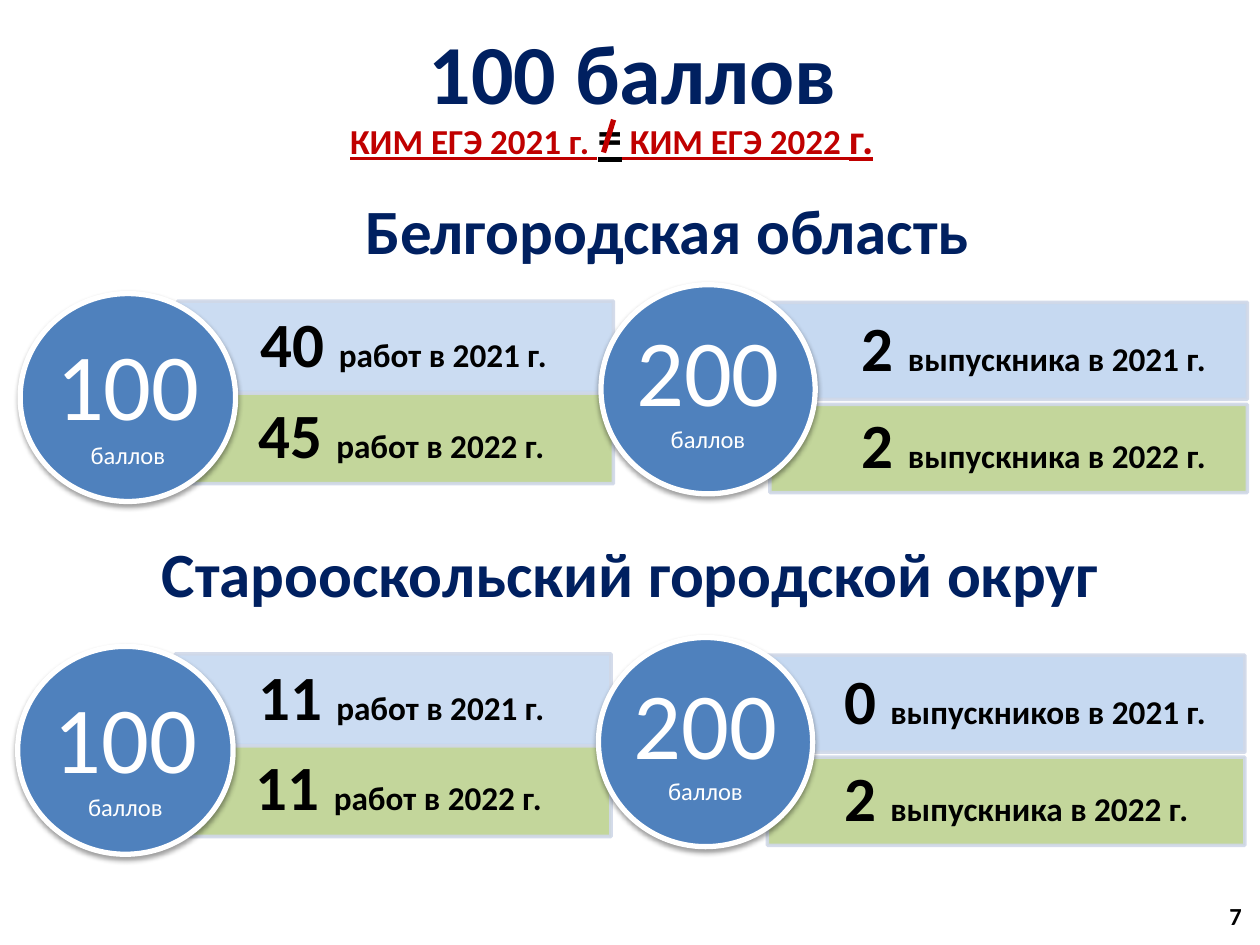
from lxml.etree import SubElement
from pptx import Presentation
from pptx.dml.color import RGBColor
from pptx.enum.shapes import MSO_CONNECTOR, MSO_SHAPE
from pptx.enum.text import MSO_ANCHOR, PP_ALIGN
from pptx.oxml.ns import qn
from pptx.util import Inches, Pt

FONT = "Calibri"
COLORS = {
    "navy": "002060", "red": "C00000", "black": "000000", "white": "FFFFFF",
    "blue": "4F81BD", "pale_blue": "C6D9F1", "green": "C3D69B", "border": "D0D8E8",
}


def color(name):
    return RGBColor.from_string(COLORS[name])


def box(left, top, width, height):
    return [Inches(value) for value in (left, top, width, height)]


def add_run(paragraph, text, size, ink, bold=True, underline=None):
    run = paragraph.add_run()
    run.text = text
    font = run.font
    font.name, font.size, font.bold, font.underline = FONT, Pt(size), bold, underline
    font.color.rgb = color(ink)


def set_opacity(fill_parent, percent):
    rgb = fill_parent.find(qn("a:solidFill")).find(qn("a:srgbClr"))
    SubElement(rgb, qn("a:alpha"), val=str(percent * 1000))


def add_text(slide, area, runs, align=PP_ALIGN.LEFT, wrap=True):
    """Text box with one paragraph; each run is (text, size, ink, bold, underline)."""
    frame = slide.shapes.add_textbox(*box(*area)).text_frame
    frame.word_wrap = wrap
    paragraph = frame.paragraphs[0]
    paragraph.alignment = align
    for run in runs:
        add_run(paragraph, *run)


def add_filled_shape(slide, kind, area, fill, line, line_width):
    shape = slide.shapes.add_shape(kind, *box(*area))
    shape.shadow.inherit = False
    shape.fill.solid()
    shape.fill.fore_color.rgb = color(fill)
    shape.line.color.rgb = color(line)
    shape.line.width = Pt(line_width)
    frame = shape.text_frame
    frame.word_wrap = True
    frame.vertical_anchor = MSO_ANCHOR.MIDDLE
    frame.margin_left = frame.margin_right = frame.margin_top = frame.margin_bottom = 0
    return shape


def add_bar(slide, area, fill, text_left, count, label, opacity=100):
    bar = add_filled_shape(slide, MSO_SHAPE.RECTANGLE, area, fill, "border", 2)
    properties = bar._element.spPr
    set_opacity(properties.find(qn("a:ln")), 90)
    if opacity < 100:
        set_opacity(properties, opacity)
    bar.text_frame.margin_left = Inches(text_left - area[0])
    paragraph = bar.text_frame.paragraphs[0]
    paragraph.alignment = PP_ALIGN.LEFT
    paragraph.line_spacing = 0.9
    add_run(paragraph, count + " ", 36, "black")
    add_run(paragraph, label, 19, "black")


def add_circle(slide, area, score, line_spacing):
    circle = add_filled_shape(slide, MSO_SHAPE.OVAL, area, "blue", "white", 3)
    effects = circle._element.spPr.find(qn("a:effectLst"))
    shadow = SubElement(effects, qn("a:outerShdw"), blurRad=str(Pt(3.1)),
                        dist=str(Pt(1.6)), dir="5400000", rotWithShape="0")
    rgb = SubElement(shadow, qn("a:srgbClr"), val=COLORS["black"])
    SubElement(rgb, qn("a:alpha"), val="38000")
    paragraph = circle.text_frame.paragraphs[0]
    paragraph.alignment = PP_ALIGN.CENTER
    paragraph.line_spacing = line_spacing
    add_run(paragraph, score, 54, "white", False)
    paragraph.add_line_break()
    add_run(paragraph, "баллов", 14, "white", False)


def add_results(slide, dx, dy, works, graduates, graduates_left):
    """One territory: works with 100 points, graduates with 200 points.

    works and graduates hold (count, label) for 2021 and then for 2022.
    """
    def moved(left, top, width, height):
        return left + dx, top + dy, width, height

    # 100 points
    add_bar(slide, moved(1.51, 3.11, 3.36, 0.73), "green", 2.05 + dx, *works[1])
    add_bar(slide, moved(1.41, 2.39, 3.46, 0.73), "pale_blue", 2.07 + dx, *works[0],
            opacity=90)
    add_circle(slide, moved(0.16, 2.33, 1.71, 1.65), "100", 1.0)
    # 200 points
    add_bar(slide, moved(6.11, 3.21, 3.79, 0.7), "green", graduates_left, *graduates[1])
    add_bar(slide, moved(6.11, 2.4, 3.79, 0.77), "pale_blue", graduates_left, *graduates[0])
    add_circle(slide, moved(4.77, 2.26, 1.7, 1.66), "200", 0.9)


def add_title(slide, text):
    title = slide.shapes.title
    title.left, title.top, title.width, title.height = box(0.04, -0.06, 9.96, 1.25)
    title.text_frame.vertical_anchor = MSO_ANCHOR.MIDDLE
    paragraph = title.text_frame.paragraphs[0]
    paragraph.alignment = PP_ALIGN.CENTER
    add_run(paragraph, text, 48, "navy")


def add_stroke(slide, start, end):
    points = [Inches(value) for value in start + end]
    stroke = slide.shapes.add_connector(MSO_CONNECTOR.STRAIGHT, *points)
    stroke.line.color.rgb = color("red")
    stroke.line.width = Pt(3)
    SubElement(stroke._element.spPr, qn("a:effectLst"))


def main():
    presentation = Presentation()
    presentation.slide_width, presentation.slide_height = Inches(10), Inches(7.5)
    slide = presentation.slides.add_slide(presentation.slide_layouts[5])

    # Title, and the "not equal" line with its struck-out sign
    add_title(slide, "100 баллов")
    add_text(slide, (2.68, 0.79, 6.13, 0.57), [
        ("КИМ ЕГЭ 2021 г. ", 20, "red", True, True),
        ("=", 28, "black", True, True),
        (" КИМ ЕГЭ 2022 ", 20, "red", True, True),
        ("г.", 24, "red", True, True),
    ])
    add_stroke(slide, (4.87, 0.95), (4.79, 1.21))

    # Region
    works_labels = ("работ в 2021 г.", "работ в 2022 г.")
    add_text(slide, (2.8, 1.47, 5.03, 0.71),
             [("Белгородская область", 36, "navy")], wrap=False)
    add_results(slide, 0, 0, list(zip(("40", "45"), works_labels)),
                [("2", "выпускника в 2021 г."), ("2", "выпускника в 2022 г.")], 6.84)

    # City district
    add_text(slide, (0, 4.19, 10, 0.71),
             [("Старооскольский городской округ", 36, "navy")], PP_ALIGN.CENTER)
    add_results(slide, -0.02, 2.8, list(zip(("11", "11"), works_labels)),
                [("0", "выпускников в 2021 г."), ("2", "выпускника в 2022 г.")], 6.7)

    # Page number
    add_text(slide, (9.66, 7.1, 0.34, 0.4), [("7", 14, "black")])
    presentation.save("out.pptx")


if __name__ == "__main__":
    main()
